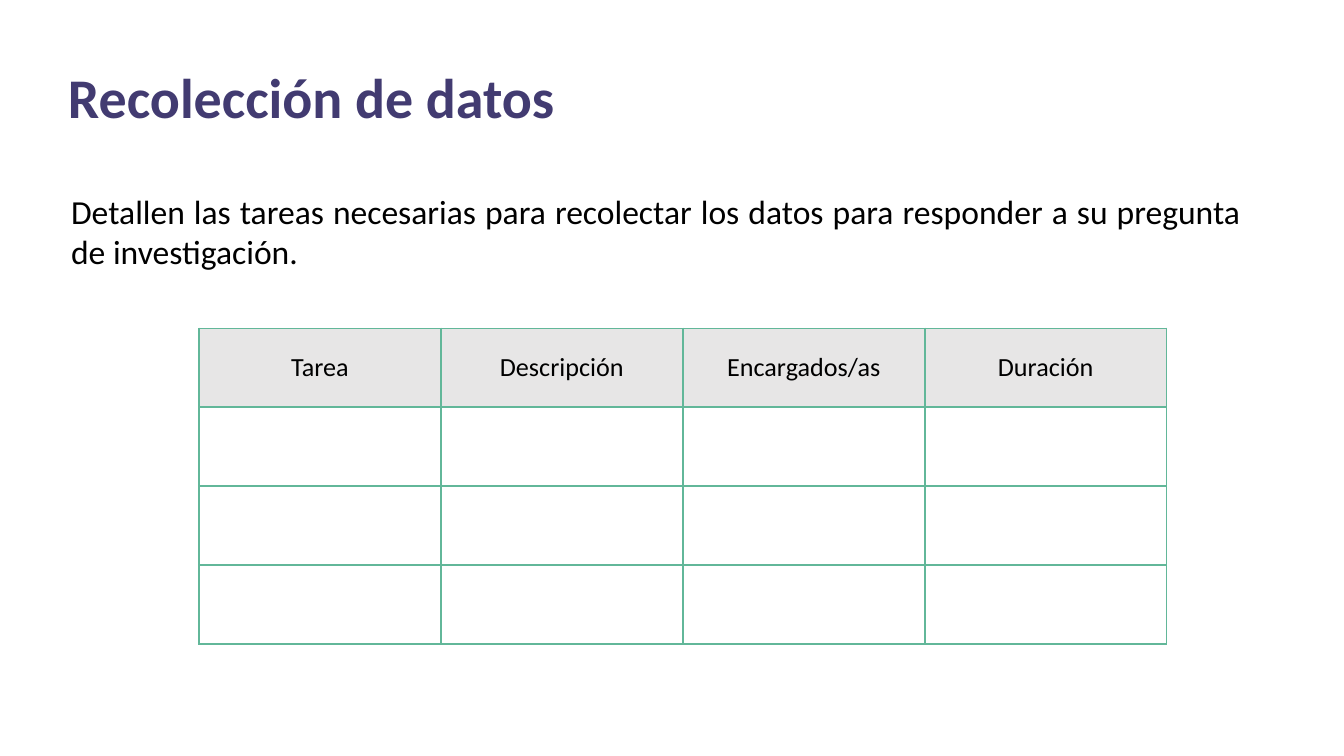
import pptx
import pptx.dml.color
import pptx.enum.text
import pptx.oxml
import pptx.oxml.ns
import pptx.util

Pt = pptx.util.Pt
ALIGN = pptx.enum.text.PP_ALIGN
ANCHOR = pptx.enum.text.MSO_ANCHOR
HEADERS = ["Tarea", "Descripción", "Encargados/as", "Duración"]
ROW_COUNT = 4
COLUMN_WIDTH = 129.6
ROW_HEIGHT = 42.3
BORDER_COLOR = "62B799"


def color(value):
    return pptx.dml.color.RGBColor.from_string(value)


def add_text(text_frame, text, size, text_color, alignment, bold=False):
    paragraph = text_frame.paragraphs[0]
    paragraph.alignment = alignment
    run = paragraph.add_run()
    run.text = text
    run.font.name = "Calibri"
    run.font.size = Pt(size)
    run.font.bold = bold
    run.font.color.rgb = color(text_color)


def add_title(slide, text):
    title = slide.shapes.title
    title.left, title.top = Pt(31), Pt(31)
    title.width, title.height = Pt(568), Pt(41.8)
    frame = title.text_frame
    frame.word_wrap = True
    frame.auto_size = pptx.enum.text.MSO_AUTO_SIZE.NONE
    frame.vertical_anchor = ANCHOR.TOP
    frame.margin_left = frame.margin_right = Pt(5.4)
    frame.margin_top = frame.margin_bottom = Pt(2.7)
    add_text(frame, text, 30, "423B71", ALIGN.LEFT, bold=True)


def add_instruction(slide, text):
    box = slide.shapes.add_textbox(Pt(31), Pt(98.6), Pt(641), Pt(51))
    box.text_frame.word_wrap = True
    add_text(box.text_frame, text, 18, "000000", ALIGN.JUSTIFY)


def set_borders(cell):
    properties = cell._tc.get_or_add_tcPr()
    for side in ("lnL", "lnR", "lnT", "lnB"):
        properties.append(pptx.oxml.parse_xml(
            f'<a:{side} {pptx.oxml.ns.nsdecls("a")} w="{Pt(1)}"><a:solidFill>'
            f'<a:srgbClr val="{BORDER_COLOR}"/></a:solidFill></a:{side}>'))


def add_task_table(slide):
    table = slide.shapes.add_table(
        ROW_COUNT, len(HEADERS), Pt(106.6), Pt(175.9),
        Pt(COLUMN_WIDTH * len(HEADERS)), Pt(ROW_HEIGHT * ROW_COUNT)).table
    table.horz_banding = False
    for column in table.columns:
        column.width = Pt(COLUMN_WIDTH)
    for row_index, row in enumerate(table.rows):
        row.height = Pt(ROW_HEIGHT)
        for cell in row.cells:
            set_borders(cell)
            cell.fill.solid()
            cell.fill.fore_color.rgb = color("FFFFFF" if row_index else "E7E6E6")
    for cell, header in zip(table.rows[0].cells, HEADERS):
        cell.vertical_anchor = ANCHOR.MIDDLE
        add_text(cell.text_frame, header, 14, "000000", ALIGN.CENTER)


def main():
    presentation = pptx.Presentation()
    presentation.slide_width = Pt(720)
    presentation.slide_height = Pt(405)
    slide = presentation.slides.add_slide(presentation.slide_layouts[5])
    add_title(slide, "Recolección de datos")
    add_task_table(slide)
    add_instruction(slide, "Detallen las tareas necesarias para recolectar los datos "
                           "para responder a su pregunta de investigación.")
    presentation.save("out.pptx")


if __name__ == "__main__":
    main()
